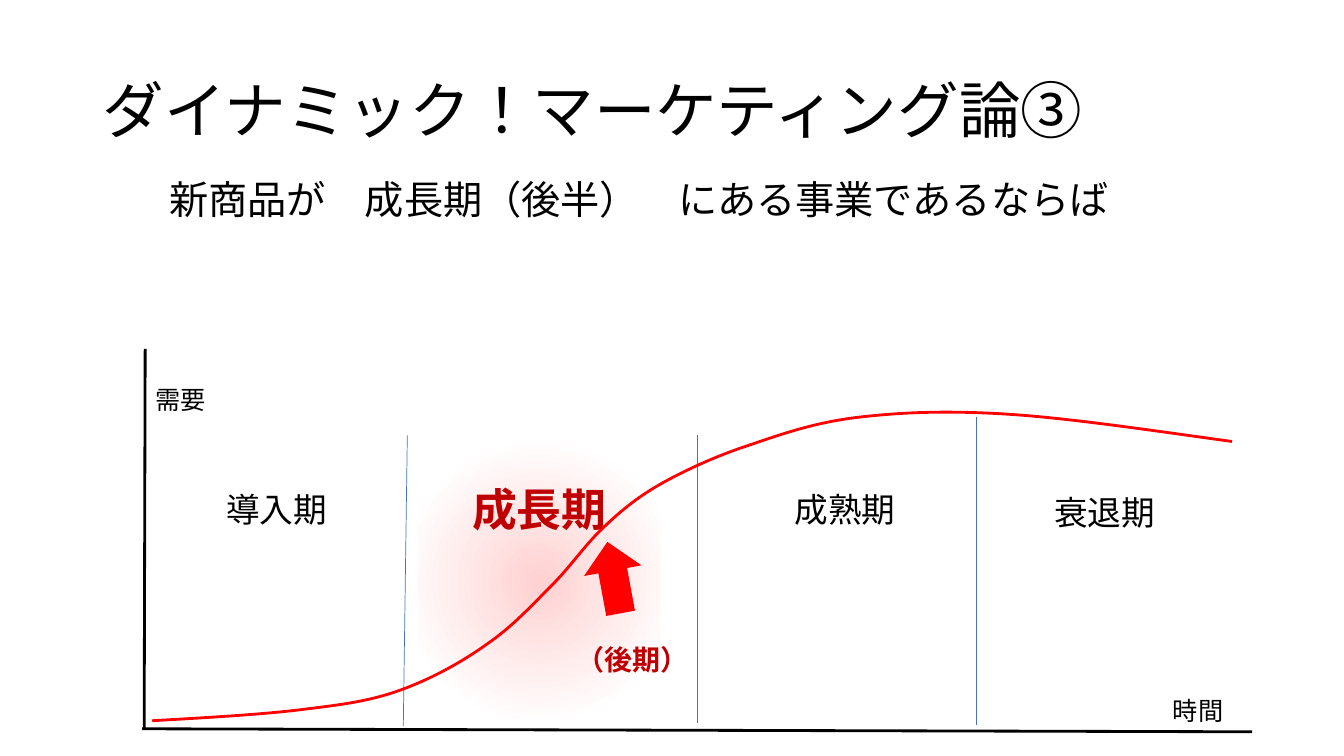
from lxml import etree
from pptx import Presentation
from pptx.dml.color import RGBColor
from pptx.enum.lang import MSO_LANGUAGE_ID as Language
from pptx.enum.shapes import MSO_CONNECTOR as Connector, MSO_SHAPE as Preset
from pptx.enum.text import MSO_ANCHOR as Anchor, PP_ALIGN as Align
from pptx.oxml import parse_xml
from pptx.oxml.ns import nsdecls, qn
from pptx.util import Inches, Pt

BLACK = RGBColor(0x00, 0x00, 0x00)
RED = RGBColor(0xFF, 0x00, 0x00)
DARK_RED = RGBColor(0xC0, 0x00, 0x00)
BLUE = RGBColor(0x44, 0x72, 0xC4)
PINK = RGBColor(0xFF, 0xD1, 0xD1)
WHITE = RGBColor(0xFF, 0xFF, 0xFF)
JAPANESE = "Noto Sans CJK JP"

PHASES = [
    ("導入期", 1.96, 4.8, 1.57),
    ("成熟期", 7.71, 4.8, 1.34),
    ("衰退期", 10.32, 4.83, 1.27),
]
DIVIDERS = [
    ((4, 7.2), (4.04, 4.32)),
    ((6.92, 7.17), (6.92, 4.32)),
    ((9.68, 7.19), (9.68, 4.14)),
]
AXES = [
    ((1.41, 7.23), (12.42, 7.26)),
    ((1.43, 7.23), (1.44, 3.46)),
]
DEMAND_START = (1.51, 7.15)
DEMAND_CURVES = [
    ((2.04, 7.12), (2.58, 7.09), (2.99, 7.04)),
    ((3.39, 6.99), (3.65, 6.96), (3.96, 6.85)),
    ((4.27, 6.74), (4.58, 6.57), (4.83, 6.39)),
    ((5.08, 6.22), (5.28, 6), (5.47, 5.81)),
    ((5.67, 5.61), (5.82, 5.38), (6.01, 5.21)),
    ((6.2, 5.03), (6.37, 4.9), (6.61, 4.77)),
    ((6.85, 4.64), (7.14, 4.51), (7.45, 4.41)),
    ((7.77, 4.3), (8.09, 4.19), (8.51, 4.14)),
    ((8.94, 4.09), (9.39, 4.07), (10.01, 4.11)),
    ((10.62, 4.15), (11.42, 4.27), (12.22, 4.38)),
]


def add_text(page, area, spans, size, color=BLACK, align=Align.LEFT, bold=False):
    box = page.shapes.add_textbox(*map(Inches, area))
    frame = box.text_frame
    frame.word_wrap = True
    para = frame.paragraphs[0]
    para.alignment = align
    for text, font_name in spans:
        span = para.add_run()
        span.text = text
        font = span.font
        font.size, font.bold = Pt(size), bold
        font.color.rgb = color
        font.name = font_name
        font.language_id = Language.JAPANESE
        east_asian = etree.SubElement(span._r.get_or_add_rPr(), qn("a:ea"))
        east_asian.set("typeface", JAPANESE)
    return box


def add_line(page, start, end, color, width):
    line = page.shapes.add_connector(Connector.STRAIGHT, *map(Inches, start + end))
    line.line.color.rgb = color
    line.line.width = Pt(width)
    etree.SubElement(line._element.spPr, qn("a:effectLst"))


def add_glow(page, area):
    glow = page.shapes.add_shape(Preset.ROUNDED_RECTANGLE, *map(Inches, area))
    glow.shadow.inherit = False
    glow.line.fill.background()
    stops = "".join(
        f'<a:gs pos="{percent * 1000}"><a:srgbClr val="{color}"/></a:gs>'
        for percent, color in [(0, PINK), (77, WHITE), (100, WHITE)]
    )
    gradient = parse_xml(
        f'<a:gradFill {nsdecls("a")} rotWithShape="1"><a:gsLst>{stops}</a:gsLst>'
        '<a:path path="circle"><a:fillToRect l="50000" t="50000" r="50000" b="50000"/>'
        "</a:path></a:gradFill>"
    )
    glow._element.spPr.find(qn("a:prstGeom")).addnext(gradient)


def add_arrow(page, area, rotation):
    arrow = page.shapes.add_shape(Preset.RIGHT_ARROW, *map(Inches, area))
    arrow.shadow.inherit = False
    arrow.rotation = rotation
    arrow.fill.solid()
    arrow.fill.fore_color.rgb = RED
    arrow.line.fill.background()


def add_curve(page, start, curves):
    points = [tuple(map(Inches, point)) for curve in curves for point in curve]
    builder = page.shapes.build_freeform(*map(Inches, start))
    builder.add_line_segments(points, close=False)
    shape = builder.convert_to_shape()
    shape.shadow.inherit = False
    shape.fill.background()
    shape.line.color.rgb = RED
    shape.line.width = Pt(2)
    outline = shape._element.find(".//" + qn("a:pathLst"))[0]
    segments = outline.findall(qn("a:lnTo"))
    for first in range(0, len(segments), 3):
        bezier = etree.SubElement(outline, qn("a:cubicBezTo"))
        for segment in segments[first:first + 3]:
            bezier.append(segment[0])
            outline.remove(segment)


def main():
    deck = Presentation()
    deck.slide_width, deck.slide_height = Inches(13.33), Inches(7.5)
    page = deck.slides.add_slide(deck.slide_layouts[6])

    title = add_text(page, (0.92, 0.4, 11.5, 1.45),
                     [("ダイナミック！マーケティング論③", JAPANESE)], 44)
    title.text_frame.vertical_anchor = Anchor.MIDDLE
    title.text_frame.paragraphs[0].line_spacing = 0.9
    add_text(page, (1.58, 1.69, 10.38, 0.57),
             [("新商品が　", JAPANESE), ("成長期（後半）　にある事業であるならば", "Calibri")], 28)

    add_glow(page, (4.15, 4.33, 2.4, 2.88))
    for start, end in AXES:
        add_line(page, start, end, BLACK, 2)
    for start, end in DIVIDERS:
        add_line(page, start, end, BLUE, 0.5)

    for name, left, top, width in PHASES:
        add_text(page, (left, top, width, 0.5), [(name, "Calibri")], 24, align=Align.CENTER)
    add_text(page, (4.57, 4.73, 1.56, 0.64), [("成長期", "Calibri")], 32,
             DARK_RED, Align.CENTER, True)
    add_text(page, (1.44, 3.76, 0.8, 0.4), [("需要", "Calibri")], 18)
    add_text(page, (11.51, 6.85, 0.72, 0.4), [("時間", "Arial")], 18, align=Align.RIGHT)

    add_arrow(page, (5.73, 5.44, 0.72, 0.58), 259.5)
    add_curve(page, DEMAND_START, DEMAND_CURVES)
    add_text(page, (5.49, 6.33, 1.56, 0.44), [("（後期）", "Calibri")], 20,
             DARK_RED, Align.CENTER, True)
    deck.save("out.pptx")


if __name__ == "__main__":
    main()
